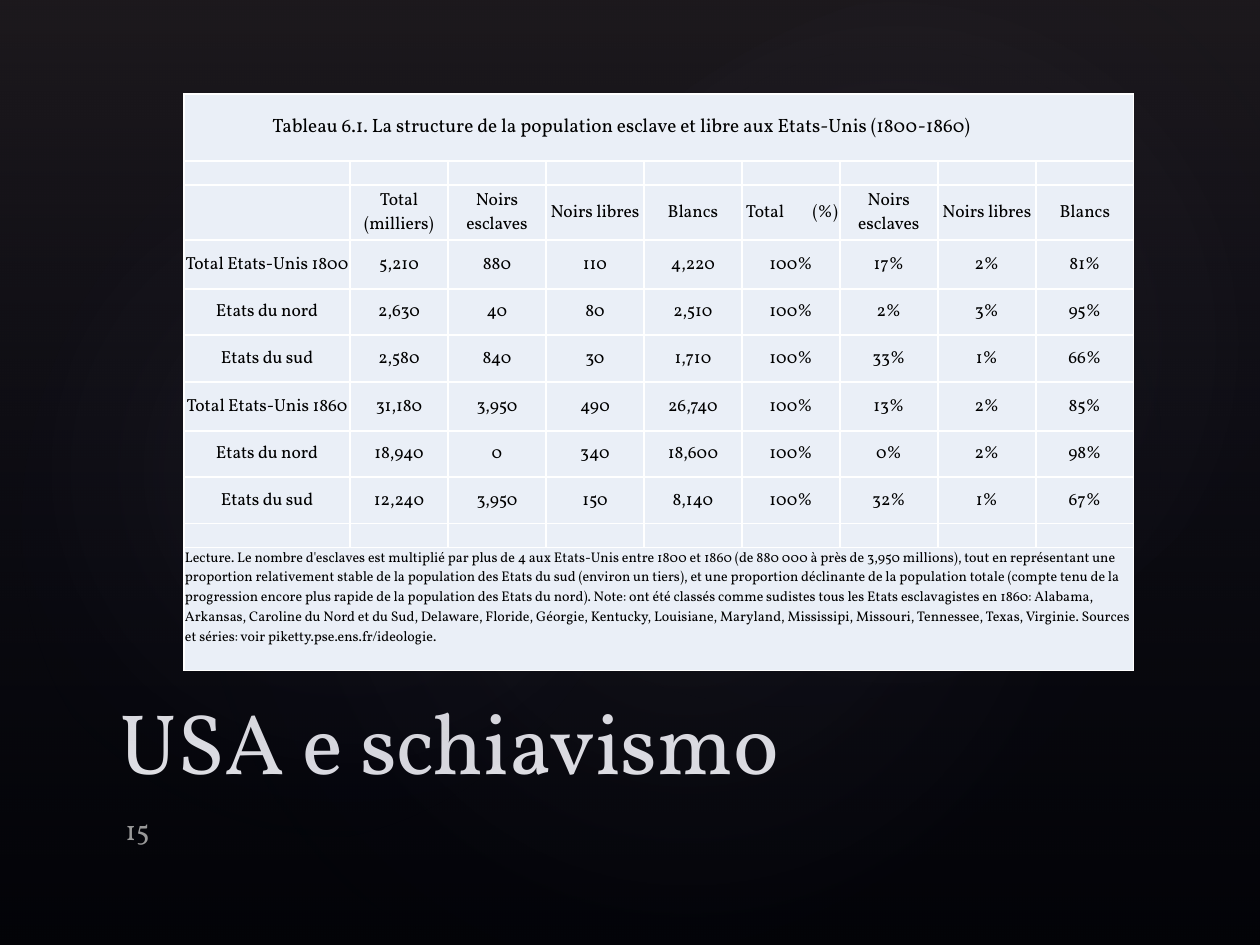
from dataclasses import dataclass

from lxml import etree
from pptx import Presentation
from pptx.dml.color import RGBColor
from pptx.enum.shapes import MSO_SHAPE
from pptx.enum.text import MSO_ANCHOR, MSO_AUTO_SIZE, PP_ALIGN
from pptx.oxml import parse_xml
from pptx.oxml.ns import nsdecls, qn
from pptx.util import Emu, Pt

RECTANGLE, OVAL = MSO_SHAPE.RECTANGLE, MSO_SHAPE.OVAL
LEFT, CENTER = PP_ALIGN.LEFT, PP_ALIGN.CENTER
TOP, MIDDLE, BOTTOM = MSO_ANCHOR.TOP, MSO_ANCHOR.MIDDLE, MSO_ANCHOR.BOTTOM
NO_AUTOFIT = MSO_AUTO_SIZE.NONE
EMU_PER_PX = 914400 / 126
FONT = "Vollkorn"
BLACK, WHITE, GREY, CELL_FILL = "000000", "FFFFFF", "999999", "EAEFF7"
LINEAR = '<a:lin ang="5400000" scaled="0"/>'
RADIAL = ('<a:path path="circle"><a:fillToRect l="50000" t="50000" '
          'r="50000" b="50000"/></a:path>')


@dataclass
class Box:
    left: int
    top: int
    width: int
    height: int


@dataclass
class Stop:
    position: int
    color: str
    opacity: int


@dataclass
class Glow:
    box: Box
    preset: int
    rotation: float
    stops: list[Stop]
    direction: str


def halo(box: Box, rotation: float, opacity: int) -> Glow:
    stops = [Stop(0, "C4BCC6", opacity), Stop(58, "242852", 0)]
    return Glow(box, OVAL, rotation, stops, RADIAL)


GLOWS = [
    Glow(Box(0, 0, 1260, 945), RECTANGLE, 0,
         [Stop(0, "504652", 36), Stop(100, "242852", 10)], LINEAR),
    halo(Box(189, 144, 998, 786), 328.7, 7),
    halo(Box(-38, 161, 764, 617), 294.3, 8),
    halo(Box(451, 16, 893, 655), 328.7, 8),
]

COLUMN_WIDTHS = [166] + [98] * 8
ROW_HEIGHTS = [67, 24, 55, 49, 46, 47, 49, 46, 47, 24, 123]
CAPTION = ("Tableau 6.1. La structure de la population esclave et libre "
           "aux Etats-Unis (1800-1860)")
READING = (
    "Lecture. Le nombre d'esclaves est multiplié par plus de 4 aux Etats-Unis "
    "entre 1800 et 1860 (de 880 000 à près de 3,950 millions), tout en "
    "représentant une proportion relativement stable de la population des Etats "
    "du sud (environ un tiers), et une proportion déclinante de la population "
    "totale (compte tenu de la progression encore plus rapide de la population "
    "des Etats du nord). Note: ont été classés comme sudistes tous les Etats "
    "esclavagistes en 1860: Alabama, Arkansas, Caroline du Nord et du Sud, "
    "Delaware, Floride, Géorgie, Kentucky, Louisiane, Maryland, Mississipi, "
    "Missouri, Tennessee, Texas, Virginie. Sources et séries: voir "
    "piketty.pse.ens.fr/ideologie."
)
GROUPS = ["Noirs esclaves", "Noirs libres", "Blancs"]
BLANK_ROW = [""] * 9
POPULATION = [
    BLANK_ROW,
    ["", "Total (milliers)", *GROUPS, "Total\t(%)", *GROUPS],
    ["Total Etats-Unis 1800", "5,210", "880", "110", "4,220", "100%", "17%", "2%", "81%"],
    ["Etats du nord", "2,630", "40", "80", "2,510", "100%", "2%", "3%", "95%"],
    ["Etats du sud", "2,580", "840", "30", "1,710", "100%", "33%", "1%", "66%"],
    ["Total Etats-Unis 1860", "31,180", "3,950", "490", "26,740", "100%", "13%", "2%", "85%"],
    ["Etats du nord", "18,940", "0", "340", "18,600", "100%", "0%", "2%", "98%"],
    ["Etats du sud", "12,240", "3,950", "150", "8,140", "100%", "32%", "1%", "67%"],
    BLANK_ROW,
]


def px(length: int) -> Emu:
    return Emu(round(length * EMU_PER_PX))


def rgb(color: str) -> RGBColor:
    return RGBColor.from_string(color)


def place(box: Box) -> tuple[Emu, Emu, Emu, Emu]:
    return px(box.left), px(box.top), px(box.width), px(box.height)


def style(paragraph, size: int, color: str, align=LEFT) -> None:
    paragraph.alignment = align
    paragraph.font.name = FONT
    paragraph.font.size = Pt(size)
    paragraph.font.color.rgb = rgb(color)


def draw_glow(slide, glow: Glow) -> None:
    shape = slide.shapes.add_shape(glow.preset, *place(glow.box))
    shape.rotation = glow.rotation
    shape.shadow.inherit = False
    shape.line.fill.background()
    stops = "".join(
        f'<a:gs pos="{stop.position * 1000}"><a:srgbClr val="{stop.color}">'
        f'<a:alpha val="{stop.opacity * 1000}"/></a:srgbClr></a:gs>'
        for stop in glow.stops)
    gradient = parse_xml(f'<a:gradFill {nsdecls("a")} rotWithShape="1">'
                         f'<a:gsLst>{stops}</a:gsLst>{glow.direction}</a:gradFill>')
    shape.element.spPr.insert(2, gradient)


def border(cell) -> None:
    properties = cell._tc.get_or_add_tcPr()
    for index, side in enumerate(("lnL", "lnR", "lnT", "lnB")):
        properties.insert(index, parse_xml(
            f'<a:{side} {nsdecls("a")} w="12700"><a:solidFill>'
            f'<a:srgbClr val="{WHITE}"/></a:solidFill></a:{side}>'))


def fill_cell(cell, text: str, size: int, align=CENTER, anchor=MIDDLE) -> None:
    cell.margin_left = cell.margin_right = cell.margin_top = px(1)
    cell.margin_bottom = 0
    cell.vertical_anchor = anchor
    cell.text = text
    paragraph = cell.text_frame.paragraphs[0]
    style(paragraph, size, BLACK, align)
    if not text:
        etree.SubElement(paragraph._p, qn("a:endParaRPr"), sz=str(size * 100))
    if "\t" in text:
        paragraph.alignment = LEFT
        cell.margin_left = px(4)
        paragraph._p.get_or_add_pPr().insert(0, parse_xml(
            f'<a:tabLst {nsdecls("a")}><a:tab pos="{px(92)}" algn="r"/></a:tabLst>'))


def draw_table(slide) -> None:
    box = Box(184, 94, sum(COLUMN_WIDTHS), sum(ROW_HEIGHTS))
    table = slide.shapes.add_table(
        len(ROW_HEIGHTS), len(COLUMN_WIDTHS), *place(box)).table
    table.first_row = table.horz_banding = False
    for column, width in zip(table.columns, COLUMN_WIDTHS):
        column.width = px(width)
    for row, height in zip(table.rows, ROW_HEIGHTS):
        row.height = px(height)
    for cell in table.iter_cells():
        cell.fill.solid()
        cell.fill.fore_color.rgb = rgb(CELL_FILL)
        border(cell)
    last_row, last_column = len(ROW_HEIGHTS) - 1, len(COLUMN_WIDTHS) - 1
    for row in (0, last_row):
        table.cell(row, 0).merge(table.cell(row, last_column))
    caption = table.cell(0, 0)
    fill_cell(caption, CAPTION, 11)
    caption.margin_right = px(75)
    for row, values in enumerate(POPULATION, start=1):
        for column, value in enumerate(values):
            fill_cell(table.cell(row, column), value, 10 if value else 8)
    fill_cell(table.cell(last_row, 0), READING, 8, LEFT, TOP)


def write(shape, text: str, size: int, color: str) -> None:
    frame = shape.text_frame
    frame.text = text
    frame.word_wrap = True
    frame.auto_size = NO_AUTOFIT
    frame.vertical_anchor = BOTTOM
    style(frame.paragraphs[0], size, color)


def main() -> None:
    deck = Presentation()
    deck.slide_width, deck.slide_height = px(1260), px(945)
    slide = deck.slides.add_slide(deck.slide_layouts[5])
    slide.background.fill.solid()
    slide.background.fill.fore_color.rgb = rgb(BLACK)
    for glow in GLOWS:
        draw_glow(slide, glow)
    draw_table(slide)
    title = slide.shapes.title
    title.left, title.top, title.width, title.height = place(Box(107, 672, 1040, 126))
    write(title, "USA e schiavismo", 49, WHITE)
    page_number = slide.shapes.add_textbox(*place(Box(113, 805, 294, 42)))
    write(page_number, "15", 16, GREY)
    page_number.text_frame.margin_bottom = px(1)
    deck.save("out.pptx")


if __name__ == "__main__":
    main()
